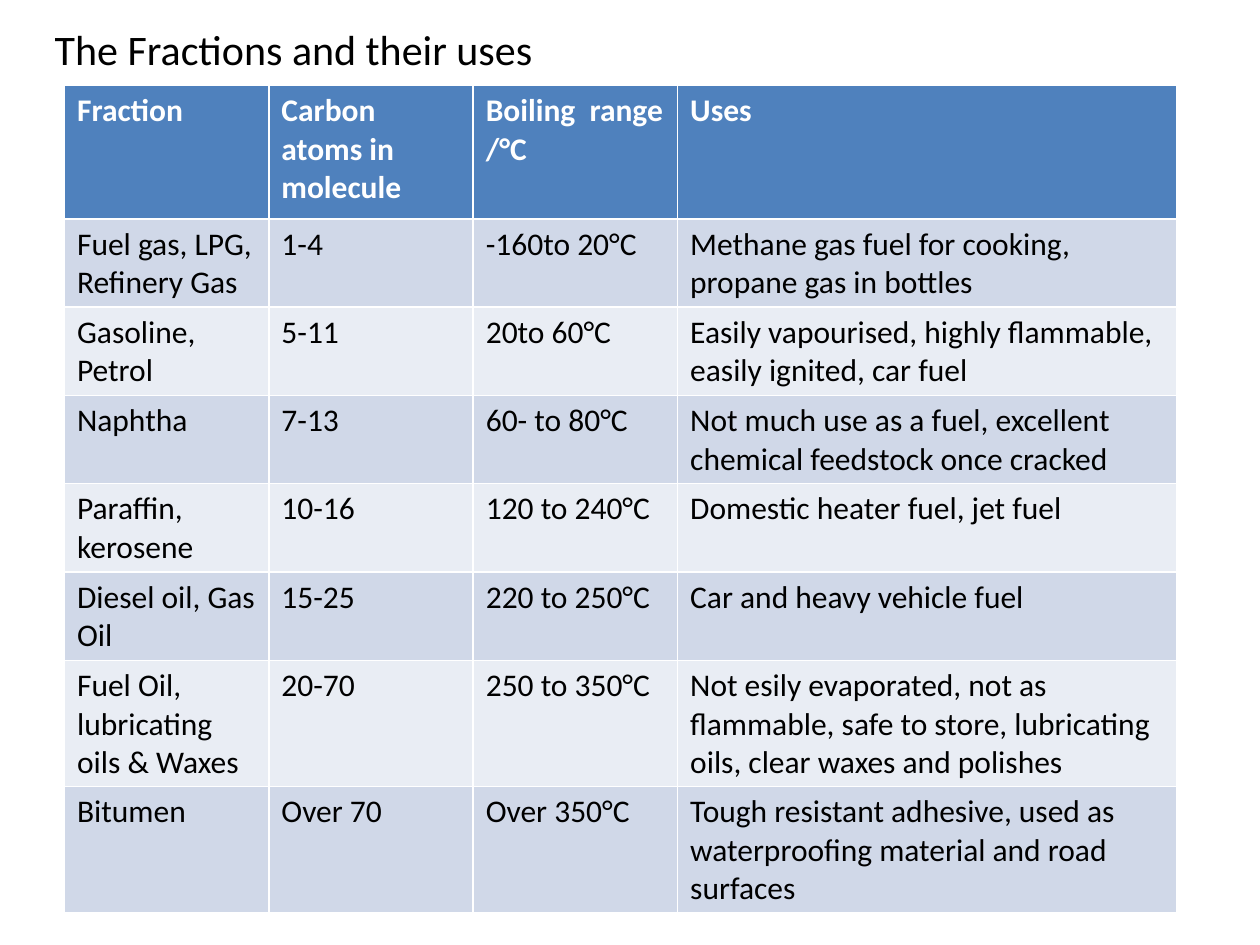
from pptx import Presentation
from pptx.dml.color import RGBColor
from pptx.enum.text import MSO_ANCHOR, PP_ALIGN
from pptx.util import Cm, Pt

TITLE = "The Fractions and their uses"
ROWS = [
    ("Fraction", "Carbon atoms in molecule", "Boiling  range /°C", "Uses"),
    ("Fuel gas, LPG, Refinery Gas", "1-4", "-160to 20°C",
     "Methane gas fuel for cooking, propane gas in bottles"),
    ("Gasoline, Petrol", "5-11", "20to 60°C",
     "Easily vapourised, highly flammable, easily ignited, car fuel"),
    ("Naphtha", "7-13", "60- to 80°C",
     "Not much use as a fuel, excellent chemical feedstock once cracked"),
    ("Paraffin, kerosene", "10-16", "120 to 240°C",
     "Domestic heater fuel, jet fuel"),
    ("Diesel oil, Gas Oil", "15-25", "220 to 250°C",
     "Car and heavy vehicle fuel"),
    ("Fuel Oil, lubricating oils & Waxes", "20-70", "250 to 350°C",
     "Not esily evaporated, not as flammable, safe to store, "
     "lubricating oils, clear waxes and polishes"),
    ("Bitumen", "Over 70", "Over 350°C",
     "Tough resistant adhesive, used as waterproofing material and road surfaces"),
]
COL_WIDTHS = [4.12, 4.12, 4.12, 10.06]
HEADER_HEIGHT, ROW_HEIGHT = 2.69, 1.78

BLACK = RGBColor(0x00, 0x00, 0x00)
WHITE = RGBColor(0xFF, 0xFF, 0xFF)
HEADER_FILL = RGBColor(0x4F, 0x81, 0xBD)
BANDS = [RGBColor(0xE9, 0xED, 0xF4), RGBColor(0xD0, 0xD8, 0xE8)]


def write(tf, text, size=18, color=BLACK, bold=False, align=PP_ALIGN.LEFT):
    tf.word_wrap = True
    p = tf.paragraphs[0]
    p.alignment = align
    r = p.add_run()
    r.text = text
    r.font.name = "Calibri"
    r.font.size = Pt(size)
    r.font.bold = bold
    r.font.color.rgb = color


def add_title(s):
    tf = s.shapes.add_textbox(Cm(0), Cm(0), Cm(11.84), Cm(1.96)).text_frame
    tf.vertical_anchor = MSO_ANCHOR.MIDDLE
    write(tf, TITLE, size=24, align=PP_ALIGN.CENTER)


def add_fractions(s):
    heights = [HEADER_HEIGHT] + [ROW_HEIGHT] * (len(ROWS) - 1)
    table = s.shapes.add_table(
        len(ROWS), len(COL_WIDTHS), Cm(1.3), Cm(1.72),
        Cm(sum(COL_WIDTHS)), Cm(sum(heights))).table
    for col, width in zip(table.columns, COL_WIDTHS):
        col.width = Cm(width)
    for i, (row, height) in enumerate(zip(ROWS, heights)):
        table.rows[i].height = Cm(height)
        header = i == 0
        for j, text in enumerate(row):
            cell = table.cell(i, j)
            cell.fill.solid()
            cell.fill.fore_color.rgb = HEADER_FILL if header else BANDS[i % 2]
            write(cell.text_frame, text, bold=header,
                  color=WHITE if header else BLACK)


def main():
    prs = Presentation()
    prs.slide_width, prs.slide_height = Cm(25.4), Cm(19.05)
    s = prs.slides.add_slide(prs.slide_layouts[6])
    add_title(s)
    add_fractions(s)
    prs.save("out.pptx")


if __name__ == "__main__":
    main()
